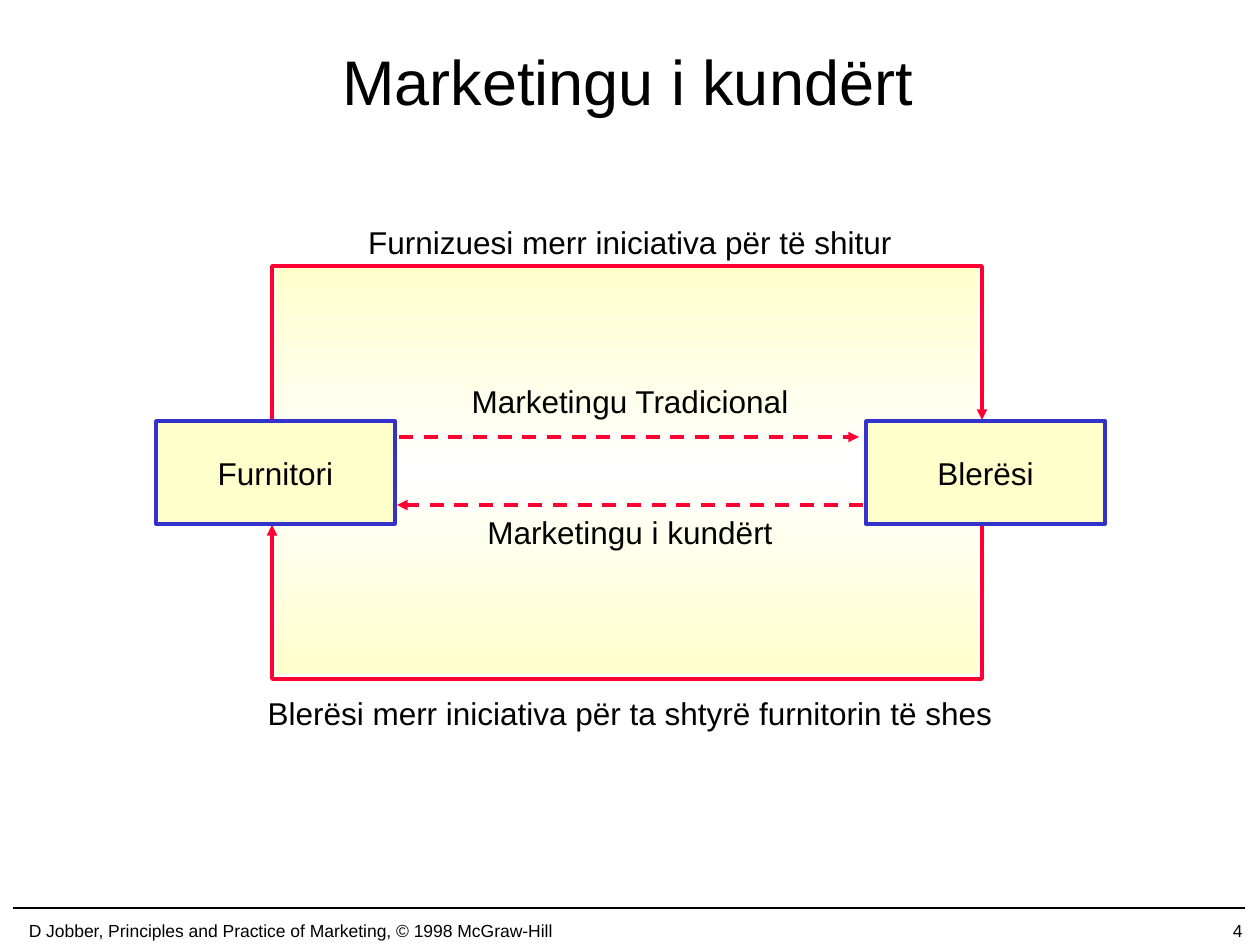
"""Build the reverse marketing slide."""
from copy import deepcopy

from lxml import etree
from pptx import Presentation
from pptx import util as u
from pptx.dml.color import RGBColor
from pptx.enum import dml, shapes, text
from pptx.oxml import ns

COLOURS = {
    "ink": "000000",
    "flow": "FF0033",
    "border": "3333CC",
    "cream": "FFFFCC",
    "white": "FFFFFF",
}
FONT = "Arial"
PX_PER_INCH = 126
CENTRE = 630
LABEL_HEIGHT = 50
BOX_TOP, BOX_WIDTH, BOX_HEIGHT = 421, 239, 103


def px(length):
    """Turn pixels into EMU."""
    return u.Emu(round(length * 914400 / PX_PER_INCH))


def rgb(name):
    """Look up a palette colour."""
    return RGBColor.from_string(COLOURS[name])


def write(frame, wording, size, align=text.PP_ALIGN.CENTER):
    """Set one formatted paragraph in a text frame."""
    frame.text = wording
    frame.vertical_anchor = text.MSO_ANCHOR.MIDDLE
    paragraph = frame.paragraphs[0]
    paragraph.alignment = align
    font = paragraph.runs[0].font
    font.name, font.size = FONT, u.Pt(size)
    font.color.rgb = rgb("ink")


def add_title(slide, wording):
    """Place the slide title."""
    title = slide.shapes.title
    title.left, title.top, title.width, title.height = map(px, (92, 1, 1071, 158))
    write(title.text_frame, wording, 36)


def add_text(slide, wording, box, size, align=text.PP_ALIGN.CENTER):
    """Add a line of text that does not wrap."""
    frame = slide.shapes.add_textbox(*map(px, box)).text_frame
    frame.word_wrap = False
    write(frame, wording, size, align)


def add_label(slide, wording, top, width):
    """Add a diagram label on the centre line."""
    add_text(slide, wording, (CENTRE - width / 2, top, width, LABEL_HEIGHT), 18)


def style_line(shape, colour, width, arrow=False):
    """Colour a line and optionally give its end an arrowhead."""
    shape.line.color.rgb = rgb(colour)
    shape.line.width = u.Pt(width)
    if arrow:
        outline = shape.line._get_or_add_ln()
        etree.SubElement(outline, ns.qn("a:tailEnd"), type="triangle")


def add_line(slide, start, end, colour, width, dashed_arrow=False):
    """Add a plain rule or a dashed arrow."""
    line = slide.shapes.add_connector(
        shapes.MSO_CONNECTOR.STRAIGHT, *map(px, start + end))
    if dashed_arrow:
        line.line.dash_style = dml.MSO_LINE.DASH
    style_line(line, colour, width, dashed_arrow)
    etree.SubElement(line._element.spPr, ns.qn("a:effectLst"))


def add_route(slide, points):
    """Add an angled arrow through the given points."""
    start, *corners = [tuple(map(px, point)) for point in points]
    builder = slide.shapes.build_freeform(*start)
    builder.add_line_segments(corners, close=False)
    route = builder.convert_to_shape()
    route.shadow.inherit = False
    route.fill.background()
    style_line(route, "flow", 2, arrow=True)


def add_rectangle(slide, box):
    """Add a rectangle without a shadow."""
    rectangle = slide.shapes.add_shape(shapes.MSO_SHAPE.RECTANGLE, *map(px, box))
    rectangle.shadow.inherit = False
    return rectangle


def add_panel(slide, box):
    """Add the panel that fades from cream to white and back."""
    panel = add_rectangle(slide, box)
    panel.line.fill.background()
    panel.fill.gradient()
    panel.fill.gradient_angle = 90
    outer, middle = panel.fill.gradient_stops
    outer.color.rgb, outer.position = rgb("cream"), 0
    middle.color.rgb, middle.position = rgb("white"), 0.5
    stops = panel._element.spPr.find(".//" + ns.qn("a:gsLst"))
    last = deepcopy(stops[0])
    last.set("pos", "100000")
    stops.append(last)


def add_party(slide, wording, left):
    """Add a named party to the exchange."""
    party = add_rectangle(slide, (left, BOX_TOP, BOX_WIDTH, BOX_HEIGHT))
    party.fill.solid()
    party.fill.fore_color.rgb = rgb("cream")
    style_line(party, "border", 2)
    write(party.text_frame, wording, 18)


def main():
    """Assemble and save the slide."""
    deck = Presentation()
    deck.slide_width, deck.slide_height = u.Inches(10), u.Inches(7.5)
    slide = deck.slides.add_slide(deck.slide_layouts[5])
    add_title(slide, "Marketingu i kundërt")

    add_line(slide, (13, 908), (1245, 908), "ink", 1)
    add_text(slide, "4", (993, 914, 262, 32), 10, text.PP_ALIGN.RIGHT)
    add_text(slide, "D Jobber, Principles and Practice of Marketing, © 1998 McGraw-Hill",
             (0, 914, 581, 32), 10)

    add_panel(slide, (276, 267, 702, 407))
    add_line(slide, (863, 505), (397, 505), "flow", 2, dashed_arrow=True)
    add_line(slide, (399, 437), (859, 437), "flow", 2, dashed_arrow=True)
    supplier, buyer = 272, 982
    add_route(slide, [(buyer, 501), (buyer, 679), (supplier, 679), (supplier, 525)])
    add_route(slide, [(supplier, 444), (supplier, 266), (buyer, 266), (buyer, 420)])
    add_party(slide, "Furnitori", 156)
    add_party(slide, "Blerësi", 866)

    for wording, top, width in (
        ("Furnizuesi merr iniciativa për të shitur", 217, 564),
        ("Blerësi merr iniciativa për ta shtyrë furnitorin të shes", 688, 777),
        ("Marketingu Tradicional", 376, 345),
        ("Marketingu i kundërt", 507, 319),
    ):
        add_label(slide, wording, top, width)
    deck.save("out.pptx")


if __name__ == "__main__":
    main()
